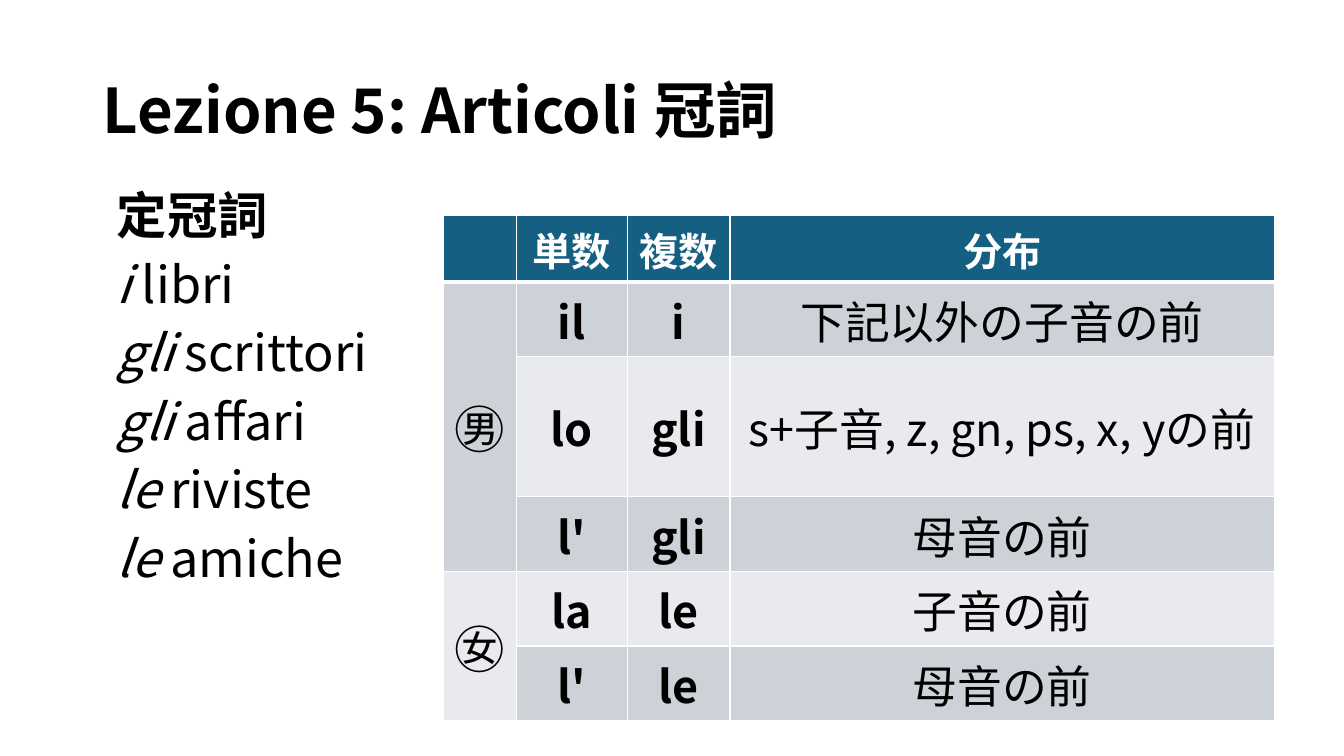
from dataclasses import dataclass
from typing import Any

from lxml.etree import SubElement
from pptx import Presentation
from pptx.dml.color import RGBColor
from pptx.enum.text import MSO_ANCHOR as Anchor, PP_ALIGN as Align
from pptx.oxml.ns import qn
from pptx.util import Inches, Pt

FONT = "Noto Sans CJK JP"
BLACK, WHITE = "000000", "FFFFFF"
HEADER_FILL, ODD_FILL, EVEN_FILL = "156082", "CCD2D8", "E8EAED"


@dataclass
class Example:
    article: str
    noun: str


@dataclass
class ArticleRow:
    singular: str
    plural: str
    use: str
    gender: str = ""
    gender_rows: int = 1
    height: float = 0.74


EXAMPLES = [
    Example("i", " libri"),
    Example("gli", " scrittori"),
    Example("gli ", "affari"),
    Example("le", " riviste"),
    Example("le ", "amiche"),
]
HEADER = ArticleRow("単数", "複数", "分布", height=0.66)
ARTICLES = [
    ArticleRow("il", "i", "下記以外の子音の前", "㊚", 3),
    ArticleRow("lo", "gli", "s+子音, z, gn, ps, x, yの前", height=1.39),
    ArticleRow("l'", "gli", "母音の前"),
    ArticleRow("la", "le", "子音の前", "㊛", 2),
    ArticleRow("l'", "le", "母音の前"),
]
COLUMN_WIDTHS = [0.72, 1.1, 1.02, 5.4]

HEADER_FORMAT = {"size": Pt(28), "bold": True}
GENDER_FORMAT = {"size": Pt(36), "bold": False}
ARTICLE_FORMAT = {"size": Pt(32), "bold": True}
USE_FORMAT = {"size": Pt(32), "bold": False}
BODY_FORMATS = [GENDER_FORMAT, ARTICLE_FORMAT, ARTICLE_FORMAT, USE_FORMAT]


def color(value: str) -> RGBColor:
    return RGBColor.from_string(value)


def add_run(paragraph: Any, text: str, formats: dict, ink: str = BLACK) -> None:
    run = paragraph.add_run()
    run.text = text
    for name, value in {"name": FONT, **formats}.items():
        setattr(run.font, name, value)
    run.font.color.rgb = color(ink)
    SubElement(run._r.get_or_add_rPr(), qn("a:ea"), typeface=FONT)


def add_text_frame(slide: Any, box: tuple, anchor: Anchor) -> Any:
    frame = slide.shapes.add_textbox(*map(Inches, box)).text_frame
    frame.word_wrap = True
    frame.vertical_anchor = anchor
    return frame


def set_borders(cell: Any, top: float, bottom: float) -> None:
    widths = {"lnL": 1, "lnR": 1, "lnT": top, "lnB": bottom}
    for side, width in widths.items():
        line = SubElement(cell._tc.get_or_add_tcPr(), qn(f"a:{side}"), w=str(Pt(width)))
        SubElement(SubElement(line, qn("a:solidFill")), qn("a:srgbClr"), val=WHITE)


def fill_row(table: Any, index: int, row: ArticleRow) -> None:
    is_header = index == 0
    table.rows[index].height = Inches(row.height)
    band = HEADER_FILL if is_header else ODD_FILL if index % 2 else EVEN_FILL
    formats = [HEADER_FORMAT] * 4 if is_header else BODY_FORMATS
    texts = [row.gender, row.singular, row.plural, row.use]
    for column, (text, style) in enumerate(zip(texts, formats)):
        cell = table.cell(index, column)
        set_borders(cell, 3 if index == 1 else 1, 3 if is_header else 1)
        cell.fill.solid()
        cell.fill.fore_color.rgb = color(band)
        cell.vertical_anchor = Anchor.MIDDLE
        paragraph = cell.text_frame.paragraphs[0]
        paragraph.alignment = Align.CENTER
        if text:
            add_run(paragraph, text, style, WHITE if is_header else BLACK)
    if row.gender_rows > 1:
        table.cell(index, 0).merge(table.cell(index + row.gender_rows - 1, 0))


def add_title(slide: Any) -> None:
    title = add_text_frame(slide, (0.92, 0.4, 11.5, 1.45), Anchor.MIDDLE).paragraphs[0]
    title.line_spacing = 0.9
    add_run(title, "Lezione 5: Articoli 冠詞", {"size": Pt(44), "bold": True})


def add_examples(slide: Any) -> None:
    examples = add_text_frame(slide, (1.06, 1.85, 12.18, 5.56), Anchor.TOP)
    add_run(examples.paragraphs[0], "定冠詞", {"size": Pt(36), "bold": True})
    for example in EXAMPLES:
        phrase = examples.add_paragraph()
        add_run(phrase, example.article, {"size": Pt(36), "italic": True})
        add_run(phrase, example.noun, {"size": Pt(36)})
    for paragraph in examples.paragraphs:
        paragraph.line_spacing = 0.9
        paragraph.space_before = Pt(10)


def add_article_table(slide: Any) -> None:
    rows = [HEADER, *ARTICLES]
    box = (4.4, 2.14, sum(COLUMN_WIDTHS), sum(row.height for row in rows))
    table = slide.shapes.add_table(len(rows), len(COLUMN_WIDTHS), *map(Inches, box)).table
    for column, width in zip(table.columns, COLUMN_WIDTHS):
        column.width = Inches(width)
    for index, row in enumerate(rows):
        fill_row(table, index, row)


def main() -> None:
    deck = Presentation()
    deck.slide_width, deck.slide_height = Inches(13.33), Inches(7.5)
    slide = deck.slides.add_slide(deck.slide_layouts[6])
    # Heading
    add_title(slide)
    # Example phrases on the left
    add_examples(slide)
    # Definite articles by gender, number and use
    add_article_table(slide)
    deck.save("out.pptx")


if __name__ == "__main__":
    main()
